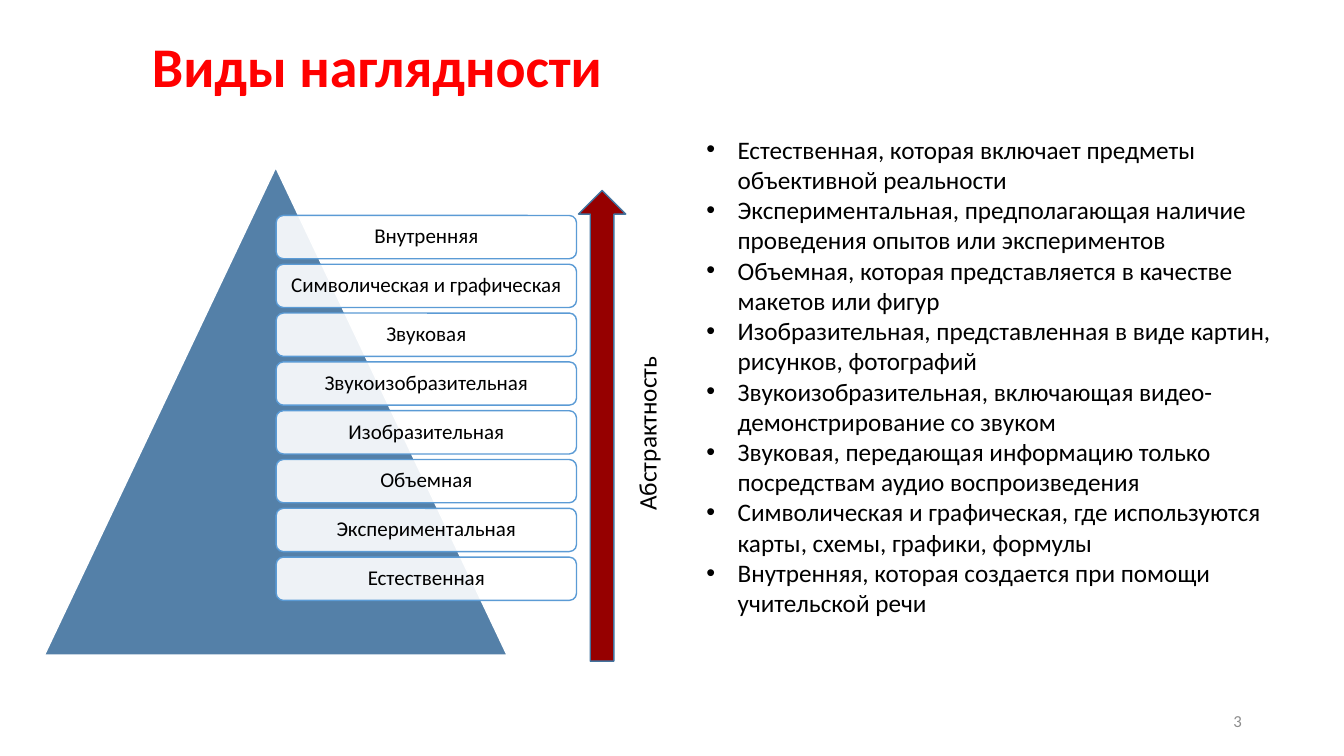
import pptx
import pptx.util
import pptx.dml.color
import pptx.enum.shapes
import pptx.enum.text
import pptx.oxml.ns
import lxml.etree

Cm = pptx.util.Cm
Pt = pptx.util.Pt
RGBColor = pptx.dml.color.RGBColor
Shape = pptx.enum.shapes.MSO_SHAPE
Align = pptx.enum.text.PP_ALIGN
Anchor = pptx.enum.text.MSO_ANCHOR
qn = pptx.oxml.ns.qn

TITLE = "Виды наглядности"
AXIS = "Абстрактность"
PAGE = "3"
LEVELS = [
    "Внутренняя",
    "Символическая и графическая",
    "Звуковая",
    "Звукоизобразительная",
    "Изобразительная",
    "Объемная",
    "Экспериментальная",
    "Естественная",
]
NOTES = [
    "Естественная, которая включает предметы объективной реальности",
    "Экспериментальная, предполагающая наличие проведения опытов или экспериментов",
    "Объемная, которая представляется в качестве макетов или фигур",
    "Изобразительная, представленная в виде картин, рисунков, фотографий",
    "Звукоизобразительная, включающая видео- демонстрирование со звуком",
    "Звуковая, передающая информацию только посредствам аудио воспроизведения",
    "Символическая и графическая, где используются карты, схемы, графики, формулы",
    "Внутренняя, которая создается при помощи учительской речи",
]

FONT = "Calibri"
RED = RGBColor(0xFF, 0x00, 0x00)
BLACK = RGBColor(0x00, 0x00, 0x00)
WHITE = RGBColor(0xFF, 0xFF, 0xFF)
GRAY = RGBColor(0x8C, 0x8C, 0x8C)
STEEL = RGBColor(0x54, 0x80, 0xA8)
SKY = RGBColor(0x5B, 0x9B, 0xD5)
NAVY = RGBColor(0x43, 0x73, 0x9E)
WINE = RGBColor(0x96, 0x00, 0x00)

BAR_LEFT, BAR_TOP, BAR_WIDTH, BAR_HEIGHT = 6.96, 5.43, 7.57, 1.09
BAR_STEP = 1.23


def place(left, top, width, height):
    return Cm(left), Cm(top), Cm(width), Cm(height)


def write(para, text, size, color, align=Align.LEFT, bold=False):
    para.alignment = align
    run = para.add_run()
    run.text = text
    run.font.name = FONT
    run.font.size = Pt(size)
    run.font.bold = bold
    run.font.color.rgb = color


def add_text(slide, box, anchor=Anchor.TOP):
    shape = slide.shapes.add_textbox(*place(*box))
    frame = shape.text_frame
    frame.word_wrap = True
    frame.vertical_anchor = anchor
    return shape


def add_form(slide, kind, box, fill, line):
    shape = slide.shapes.add_shape(kind, *place(*box))
    shape.shadow.inherit = False
    shape.fill.solid()
    shape.fill.fore_color.rgb = fill
    shape.line.color.rgb = line
    shape.line.width = Pt(1)
    return shape


def add_bar(slide, row, text):
    top = BAR_TOP + row * BAR_STEP
    box = (BAR_LEFT, top, BAR_WIDTH, BAR_HEIGHT)
    bar = add_form(slide, Shape.ROUNDED_RECTANGLE, box, WHITE, SKY)
    color = bar.fill._xPr.find(qn("a:solidFill"))[0]
    lxml.etree.SubElement(color, qn("a:alpha")).set("val", "90000")
    frame = bar.text_frame
    frame.word_wrap = True
    frame.vertical_anchor = Anchor.MIDDLE
    frame.margin_left = frame.margin_right = Cm(0.2)
    frame.margin_top = frame.margin_bottom = Cm(0.2)
    para = frame.paragraphs[0]
    para.line_spacing = 0.9
    write(para, text, 15, BLACK, Align.CENTER)


def add_notes(slide):
    frame = add_text(slide, (17.55, 3.25, 16, 12.57)).text_frame
    for row, text in enumerate(NOTES):
        para = frame.add_paragraph() if row else frame.paragraphs[0]
        props = para._p.get_or_add_pPr()
        props.set("marL", str(Cm(0.79)))
        props.set("indent", str(-Cm(0.79)))
        lxml.etree.SubElement(props, qn("a:buFont")).set("typeface", "Arial")
        lxml.etree.SubElement(props, qn("a:buChar")).set("char", "•")
        write(para, text, 18, BLACK)


def main():
    deck = pptx.Presentation()
    deck.slide_width = Cm(33.87)
    deck.slide_height = Cm(19.05)
    slide = deck.slides.add_slide(deck.slide_layouts[6])

    title = add_text(slide, (3.58, 0.43, 27.97, 2.62), Anchor.MIDDLE)
    para = title.text_frame.paragraphs[0]
    para.line_spacing = 0.9
    write(para, TITLE, 40, RED, bold=True)

    add_form(slide, Shape.ISOSCELES_TRIANGLE, (1.12, 4.22, 11.66, 12.29), STEEL, WHITE)
    for row, text in enumerate(LEVELS):
        add_bar(slide, row, text)

    page = add_text(slide, (23.93, 17.65, 7.62, 1.02), Anchor.MIDDLE)
    write(page.text_frame.paragraphs[0], PAGE, 12, GRAY, Align.RIGHT)

    add_form(slide, Shape.UP_ARROW, (14.58, 4.8, 1.19, 11.86), WINE, NAVY)
    axis = add_text(slide, (12.34, 10.41, 7.92, 1.02))
    axis.rotation = 270
    write(axis.text_frame.paragraphs[0], AXIS, 18, BLACK, Align.CENTER)

    add_notes(slide)
    deck.save("out.pptx")


if __name__ == "__main__":
    main()
